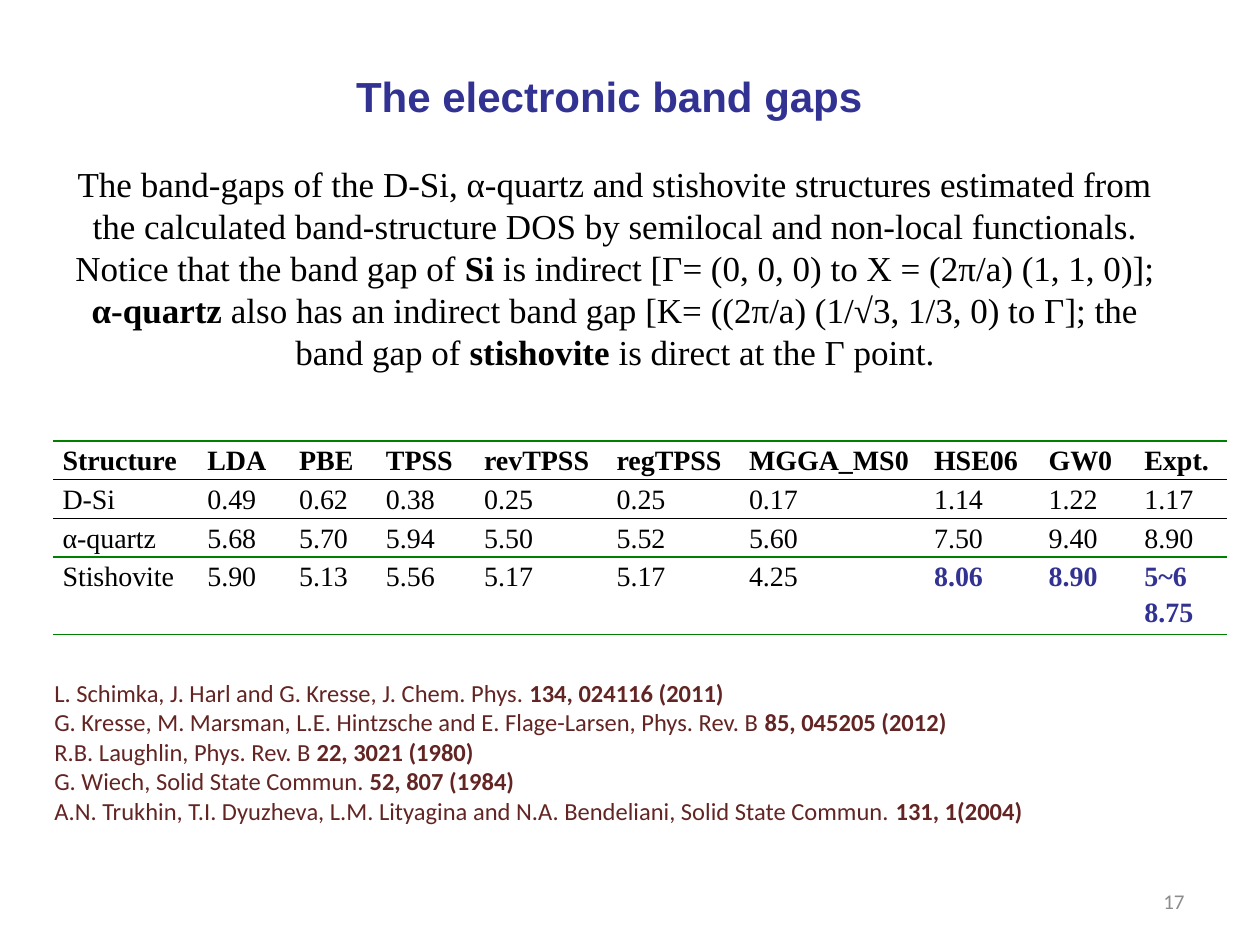
from lxml import etree
from pptx import Presentation
from pptx.dml.color import RGBColor
from pptx.enum.text import MSO_ANCHOR, MSO_AUTO_SIZE, PP_ALIGN
from pptx.oxml.ns import qn
from pptx.util import Cm, Pt

MIDDLE, TOP = MSO_ANCHOR.MIDDLE, MSO_ANCHOR.TOP
FIT, FIXED = MSO_AUTO_SIZE.SHAPE_TO_FIT_TEXT, MSO_AUTO_SIZE.NONE
LEFT, CENTER, RIGHT, JUSTIFY = PP_ALIGN.LEFT, PP_ALIGN.CENTER, PP_ALIGN.RIGHT, PP_ALIGN.JUSTIFY
COLORS = {"blue": "323292", "black": "000000", "green": "008000", "brown": "632523", "gray": "8C8C8C"}
NO_GRID = "{2D5ABB26-0587-4C30-8999-92F81FD0307C}"
FONTS = {
    "title": {"name": "Arial", "size": Pt(24), "bold": True},
    "intro": {"name": "Times New Roman", "size": Pt(20)},
    "cell": {"name": "Times New Roman", "size": Pt(16)},
    "source": {"name": "Calibri", "size": Pt(14)},
    "number": {"name": "Calibri", "size": Pt(12)},
}

TITLE = "The electronic band gaps "
INTRO = [
    ("The band-gaps of the D-Si, α-quartz and stishovite structures estimated from the calculated "
     "band-structure DOS by semilocal and non-local functionals. Notice that the band gap of ", False),
    ("Si", True),
    (" is indirect [Г= (0, 0, 0) to X = (2π/a) (1, 1, 0)]; ", False),
    ("α-quartz", True),
    (" also has an indirect band gap [K= ((2π/a) (1/√3, 1/3, 0) to Г]; the band gap of ", False),
    ("stishovite", True),
    (" is direct at the Г point.", False),
]
GAPS = [
    ["Structure", "LDA", "PBE", "TPSS", "revTPSS", "regTPSS", "MGGA_MS0", "HSE06", "GW0", "Expt."],
    ["D-Si", "0.49", "0.62", "0.38", "0.25", "0.25", "0.17", "1.14", "1.22", "1.17"],
    ["α-quartz", "5.68", "5.70", "5.94", "5.50", "5.52", "5.60", "7.50", "9.40", "8.90"],
    ["Stishovite", "5.90", "5.13", "5.56", "5.17", "5.17", "4.25", "8.06", "8.90", "5~6\n8.75"],
]
WIDTHS = [2.92, 1.85, 1.75, 1.98, 2.67, 2.67, 3.73, 2.31, 1.93, 1.85]
HEIGHTS = [0.78, 0.78, 0.78, 1.54]
RULES = [
    {"lnT": ("green", 1), "lnB": ("black", 0.5)},
    {"lnT": ("black", 0.5)},
    {"lnB": ("green", 1)},
    {"lnT": ("green", 1), "lnB": ("green", 1)},
]
SOURCES = [
    ("L. Schimka, J. Harl and G. Kresse, J. Chem. Phys. ", "134, 024116 (2011)"),
    ("G. Kresse, M. Marsman, L.E. Hintzsche and E. Flage-Larsen, Phys. Rev. B ", "85, 045205 (2012)"),
    ("R.B. Laughlin, Phys. Rev. B ", "22, 3021 (1980)"),
    ("G. Wiech, Solid State Commun. ", "52, 807 (1984)"),
    ("A.N. Trukhin, T.I. Dyuzheva, L.M. Lityagina and N.A. Bendeliani, Solid State Commun. ", "131, 1(2004)"),
]


def assign(target, values):
    """Set every attribute named in a dict of values."""
    for name, value in values.items():
        setattr(target, name, value)


def place(shape, box):
    """Move a shape to a box given in centimetres."""
    assign(shape, dict(zip(("left", "top", "width", "height"), map(Cm, box))))


def paint(font, style, color, **extra):
    """Apply a named font style and colour."""
    assign(font, {**FONTS[style], **extra})
    font.color.rgb = RGBColor.from_string(COLORS[color])


def write(para, parts, style, color, align):
    """Fill a paragraph with plain and bold runs."""
    assign(para, {"alignment": align, "space_before": Pt(0), "line_spacing": 1.0})
    for text, bold in parts:
        run = para.add_run()
        run.text = text
        paint(run.font, style, color, bold=bold)


def add_head(shape, box):
    """Put the heading and its introduction in the title."""
    place(shape, box)
    frame = shape.text_frame
    assign(frame, {"word_wrap": True, "vertical_anchor": MIDDLE, "auto_size": FIXED})
    head = frame.paragraphs[0]
    write(head, [(TITLE, True)], "title", "blue", CENTER)
    head.space_after = Pt(24)
    write(frame.add_paragraph(), INTRO, "intro", "black", CENTER)


def rule(cell, side, color, width):
    """Draw a solid border on one side of a cell."""
    line = etree.SubElement(cell._tc.get_or_add_tcPr(), qn("a:" + side), w=str(Pt(width)))
    fill = etree.SubElement(line, qn("a:solidFill"))
    etree.SubElement(fill, qn("a:srgbClr"), val=COLORS[color])


def add_gaps(slide, box):
    """Build the table of band gaps."""
    left, top = box
    size = map(Cm, (left, top, sum(WIDTHS), sum(HEIGHTS)))
    table = slide.shapes.add_table(len(GAPS), len(WIDTHS), *size).table
    assign(table, {"first_row": False, "horz_banding": False})
    table._tbl.tblPr.find(qn("a:tableStyleId")).text = NO_GRID
    for col, width in zip(table.columns, WIDTHS):
        col.width = Cm(width)
    for r, (row, height) in enumerate(zip(table.rows, HEIGHTS)):
        row.height = Cm(height)
        for c, cell in enumerate(row.cells):
            cell.text = GAPS[r][c]
            assign(cell, {"margin_left": Cm(0.19), "margin_right": Cm(0.19), "margin_top": 0, "margin_bottom": 0})
            for side, (color, width) in RULES[r].items():
                rule(cell, side, color, width)
            cell.fill.background()
            marked = r == 3 and c >= 7
            for para in cell.text_frame.paragraphs:
                assign(para, {"alignment": JUSTIFY, "line_spacing": 1.15})
                paint(para.runs[0].font, "cell", "blue" if marked else "black", bold=marked or r == 0)


def add_sources(shape, box):
    """List the references in the body."""
    place(shape, box)
    frame = shape.text_frame
    assign(frame, {"word_wrap": True, "vertical_anchor": TOP, "auto_size": FIT})
    for i, (text, issue) in enumerate(SOURCES):
        para = frame.add_paragraph() if i else frame.paragraphs[0]
        write(para, [(text, False), (issue, True)], "source", "brown", LEFT)
        props = para._p.get_or_add_pPr()
        for name in ("marL", "indent"):
            props.set(name, "0")
        etree.SubElement(props, qn("a:buNone"))


def add_number(slide, box):
    """Add the page number."""
    shape = slide.shapes.add_textbox(*map(Cm, box))
    frame = shape.text_frame
    assign(frame, {"word_wrap": True, "vertical_anchor": MIDDLE})
    write(frame.paragraphs[0], [("17", False)], "number", "gray", RIGHT)


def main():
    """Build and save the slide."""
    deck = Presentation()
    assign(deck, {"slide_width": Cm(25.4), "slide_height": Cm(19.05)})
    slide = deck.slides.add_slide(deck.slide_layouts[1])
    add_gaps(slide, (1.07, 8.89))
    add_head(slide.shapes.title, (1.07, 1.27, 22.66, 6.4))
    add_sources(slide.placeholders[1], (0.84, 13.54, 24.56, 3.25))
    add_number(slide, (18.21, 17.65, 5.92, 1.02))
    deck.save("out.pptx")


if __name__ == "__main__":
    main()
